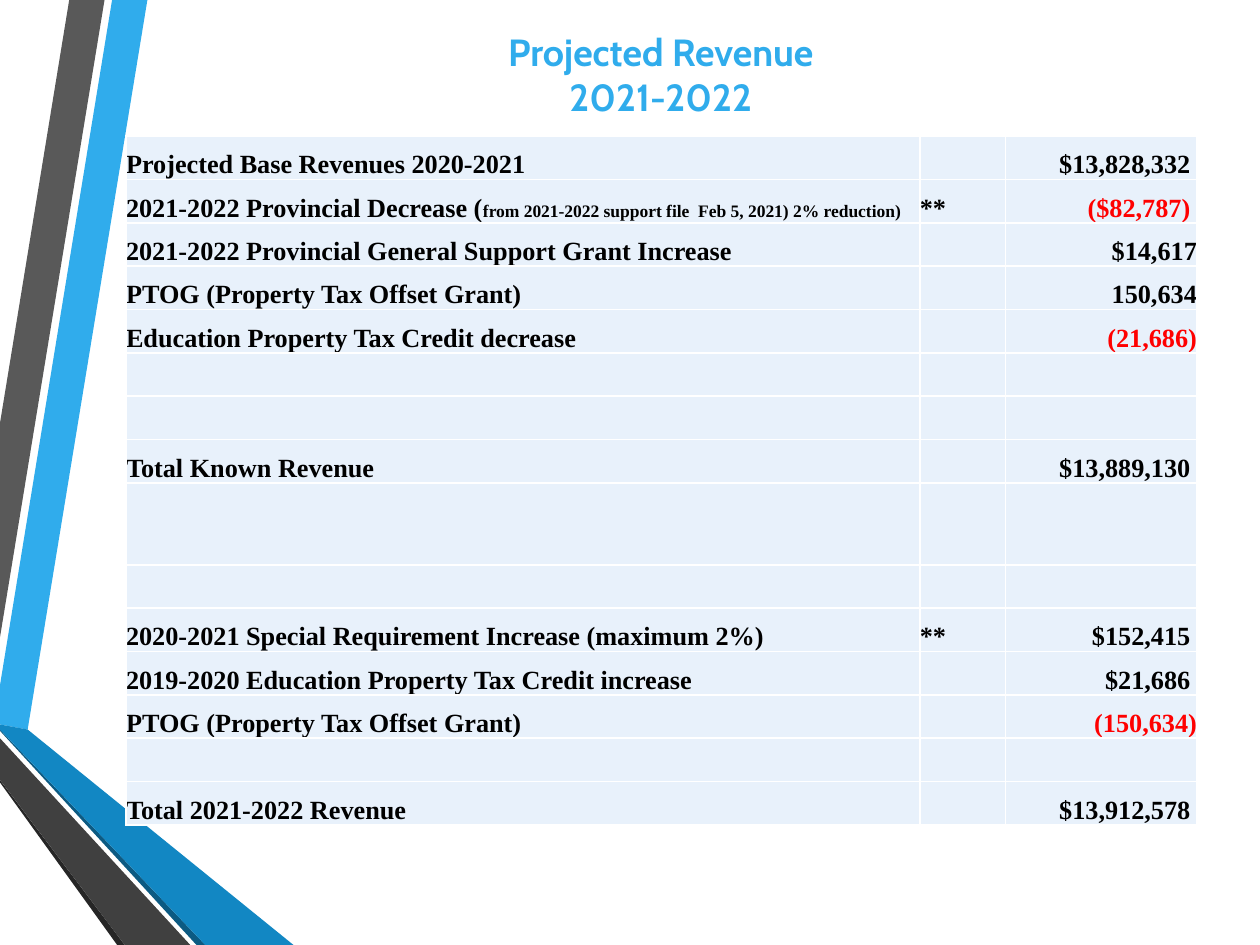
from dataclasses import dataclass

import pptx
import pptx.dml.color
import pptx.enum.text
import pptx.oxml
import pptx.oxml.ns
import pptx.util

Inches = pptx.util.Inches
Pt = pptx.util.Pt
RGBColor = pptx.dml.color.RGBColor
Align = pptx.enum.text.PP_ALIGN
Anchor = pptx.enum.text.MSO_ANCHOR

SKY = RGBColor(0x30, 0xAC, 0xEC)
BLUE = RGBColor(0x12, 0x87, 0xC3)
NAVY = RGBColor(0x0C, 0x5A, 0x82)
GREY = RGBColor(0x59, 0x59, 0x59)
CHARCOAL = RGBColor(0x40, 0x40, 0x40)
NEAR_BLACK = RGBColor(0x26, 0x26, 0x26)
BLACK = RGBColor(0, 0, 0)
RED = RGBColor(0xFF, 0, 0)
CELL_FILL = RGBColor(0xE8, 0xF1, 0xFB)

TABLE_HEIGHT = 5.47
GAP_ROW, GAP_HEIGHT = 8, 0.65
COLUMN_WIDTHS = (6.3, 0.68, 1.52)


@dataclass
class Ribbon:
    color: RGBColor
    points: list[tuple[float, float]]


@dataclass
class RevenueRow:
    label: str = ""
    amount: str = ""
    mark: str = ""
    detail: str = ""


RIBBONS = [
    Ribbon(SKY, [(0, 5.44), (0, 5.75), (0.22, 5.79), (1.17, 0), (0.89, 0)]),
    Ribbon(GREY, [(0.83, 0), (0.55, 0), (0, 3.36), (0, 5.06)]),
    Ribbon(NEAR_BLACK, [(0, 6.19), (0, 6.21), (0.93, 7.5), (0.99, 7.5)]),
    Ribbon(NAVY, [(0, 5.79), (0, 5.8), (1.56, 7.5), (1.63, 7.5)]),
    Ribbon(BLUE, [(0, 5.79), (1.63, 7.5), (2.33, 7.5), (0.22, 5.79), (0, 5.75)]),
    Ribbon(CHARCOAL, [(0, 6.19), (0.99, 7.5), (1.51, 7.5), (0, 5.86)]),
]

ROWS = [
    RevenueRow("Projected Base Revenues 2020-2021", "$13,828,332 "),
    RevenueRow("2021-2022 Provincial Decrease (", "($82,787) ", "**",
               "from 2021-2022 support file  Feb 5, 2021) 2% reduction)"),
    RevenueRow("2021-2022 Provincial General Support Grant Increase", "$14,617"),
    RevenueRow("PTOG (Property Tax Offset Grant)", "150,634"),
    RevenueRow("Education Property Tax Credit decrease", "(21,686)"),
    RevenueRow(),
    RevenueRow(),
    RevenueRow("Total Known Revenue", "$13,889,130 "),
    RevenueRow(),
    RevenueRow(),
    RevenueRow("2020-2021 Special Requirement Increase (maximum 2%)", "$152,415 ", "**"),
    RevenueRow("2019-2020 Education Property Tax Credit increase", "$21,686 "),
    RevenueRow("PTOG (Property Tax Offset Grant)", "(150,634)"),
    RevenueRow(),
    RevenueRow("Total 2021-2022 Revenue", "$13,912,578 "),
]


def add_text(p, text: str, *, size: float = 15, font: str = "Times New Roman",
             color: RGBColor = BLACK, align=Align.JUSTIFY) -> None:
    p.alignment = align
    r = p.add_run()
    r.text = text
    r.font.size = Pt(size)
    r.font.name = font
    r.font.bold = True
    r.font.color.rgb = color


def add_ribbon(slide, ribbon: Ribbon) -> None:
    points = [(Inches(x), Inches(y)) for x, y in ribbon.points]
    builder = slide.shapes.build_freeform(*points[0])
    builder.add_line_segments(points[1:], close=True)
    sp = builder.convert_to_shape()
    sp.shadow.inherit = False
    sp.fill.solid()
    sp.fill.fore_color.rgb = ribbon.color
    sp.line.fill.background()


def add_title(slide) -> None:
    title = slide.shapes.title
    title.left, title.top = Inches(1.08), Inches(0.17)
    title.width, title.height = Inches(8.33), Inches(0.83)
    tf = title.text_frame
    tf.word_wrap = True
    tf.auto_size = pptx.enum.text.MSO_AUTO_SIZE.NONE
    tf.vertical_anchor = Anchor.MIDDLE
    p = tf.paragraphs[0]
    style = dict(size=21.6, font="Cabin", color=SKY, align=Align.CENTER)
    add_text(p, "Projected Revenue", **style)
    p.add_line_break()
    add_text(p, "2021-2022", **style)


def style_cell(cell) -> None:
    """Set zero margins, bottom anchor, white borders and the pale fill."""
    cell.margin_left = cell.margin_right = cell.margin_top = cell.margin_bottom = 0
    cell.vertical_anchor = Anchor.BOTTOM
    tc_pr = cell._tc.get_or_add_tcPr()
    for side in ("lnL", "lnR", "lnT", "lnB"):
        tc_pr.append(pptx.oxml.parse_xml(
            f'<a:{side} {pptx.oxml.ns.nsdecls("a")} w="12700"><a:solidFill>'
            f'<a:srgbClr val="FFFFFF"/></a:solidFill></a:{side}>'))
    cell.fill.solid()
    cell.fill.fore_color.rgb = CELL_FILL


def add_revenue_table(slide) -> None:
    table = slide.shapes.add_table(
        len(ROWS), len(COLUMN_WIDTHS), Inches(1), Inches(1.08),
        Inches(sum(COLUMN_WIDTHS)), Inches(TABLE_HEIGHT)).table
    table.first_row = table.horz_banding = False
    for column, width in zip(table.columns, COLUMN_WIDTHS):
        column.width = Inches(width)
    row_height = (TABLE_HEIGHT - GAP_HEIGHT) / (len(ROWS) - 1)
    for i, row in enumerate(ROWS):
        table.rows[i].height = Inches(GAP_HEIGHT if i == GAP_ROW else row_height)
        cells = table.rows[i].cells
        for cell in cells:
            style_cell(cell)
        label, mark, amount = (cell.text_frame.paragraphs[0] for cell in cells)
        if row.label:
            add_text(label, row.label)
        if row.detail:
            add_text(label, row.detail, size=10)
        if row.mark:
            add_text(mark, row.mark)
        if row.amount:
            color = RED if row.amount.startswith("(") else BLACK
            add_text(amount, row.amount, color=color, align=Align.RIGHT)


def main() -> None:
    prs = pptx.Presentation()
    prs.slide_width, prs.slide_height = Inches(10), Inches(7.5)
    slide = prs.slides.add_slide(prs.slide_layouts.get_by_name("Title Only"))
    for ribbon in RIBBONS:
        add_ribbon(slide, ribbon)
    add_title(slide)
    add_revenue_table(slide)
    prs.save("out.pptx")


if __name__ == "__main__":
    main()
